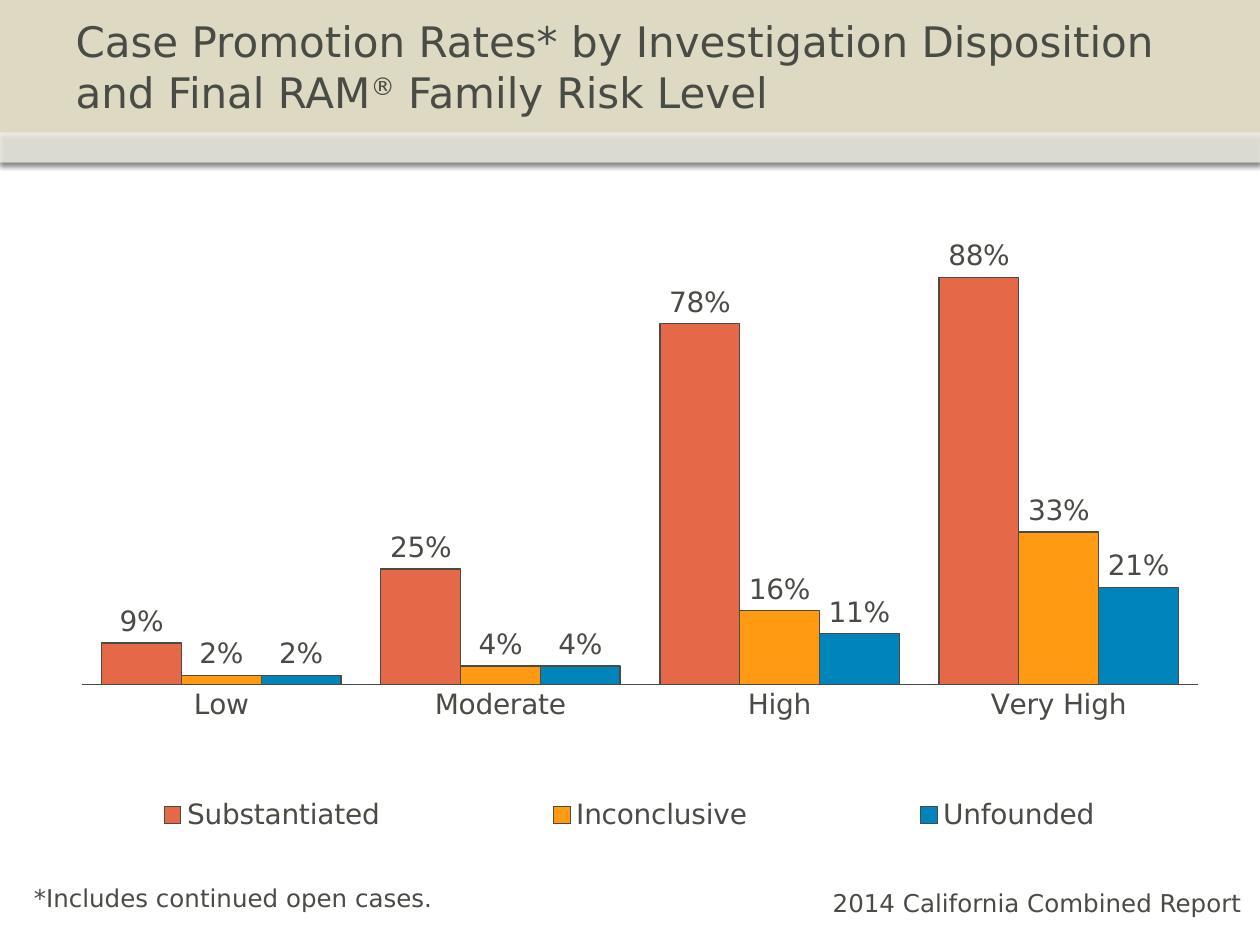
from lxml import etree
from pptx import Presentation
from pptx.chart.data import CategoryChartData
from pptx.dml.color import RGBColor
from pptx.enum import chart as ch, shapes, text
from pptx.oxml import parse_xml
from pptx.oxml.ns import nsdecls, qn
from pptx.util import Pt

FONT = "DejaVu Sans"
INK = RGBColor(0x48, 0x4C, 0x45)
SAND = RGBColor(0xDD, 0xD9, 0xC3)
WHITE = RGBColor(0xFF, 0xFF, 0xFF)
CORAL = RGBColor(0xE5, 0x68, 0x49)
ORANGE = RGBColor(0xFF, 0x9A, 0x12)
BLUE = RGBColor(0x00, 0x85, 0xBA)

LEVELS = ["Low", "Moderate", "High", "Very High"]
RATES = [
    ("Substantiated", CORAL, [0.09, 0.25, 0.78, 0.88]),
    ("Inconclusive", ORANGE, [0.02, 0.04, 0.16, 0.33]),
    ("Unfounded", BLUE, [0.02, 0.04, 0.11, 0.21]),
]
SHADOW = (
    f'<a:effectLst {nsdecls("a")}><a:outerShdw blurRad="{Pt(3.1)}" dist="{Pt(1.8)}" '
    'dir="5400000" rotWithShape="0"><a:srgbClr val="000000"><a:alpha val="35000"/>'
    '</a:srgbClr></a:outerShdw></a:effectLst>'
)


def style(font, size):
    font.name, font.size, font.bold = FONT, Pt(size), False
    font.color.rgb = INK


def add_band(slide, order, box, color, alpha=None):
    sp = slide.shapes.add_shape(shapes.MSO_SHAPE.RECTANGLE, *map(Pt, box))
    sp.fill.solid()
    sp.fill.fore_color.rgb = color
    sp.line.fill.background()
    if alpha is not None:
        clr = sp._element.spPr.find(".//" + qn("a:srgbClr"))
        etree.SubElement(clr, qn("a:alpha")).set("val", str(alpha * 1000))
    sp._element.spPr.append(parse_xml(SHADOW))
    slide.shapes._spTree.insert(2 + order, sp._element)  # behind the title


def add_header(slide, box):
    x, y, w, h = box
    strip = 17.28
    add_band(slide, 0, box, SAND)
    add_band(slide, 1, (x, y + h - strip, w, strip), WHITE, 53)

    # Title
    title = slide.shapes.title
    title.left, title.top = Pt(x + 36), Pt(y)
    title.width, title.height = Pt(w - 72), Pt(h - strip)
    tf = title.text_frame
    tf.word_wrap = True
    tf.auto_size = text.MSO_AUTO_SIZE.NONE
    tf.vertical_anchor = text.MSO_ANCHOR.MIDDLE
    p = tf.paragraphs[0]
    p.alignment = text.PP_ALIGN.LEFT
    style(p.font, 24)
    for part in ("Case Promotion Rates* by Investigation Disposition and Final RAM",
                 "®", " Family Risk Level"):
        r = p.add_run()
        r.text = part
        if part == "®":
            r.font._element.set("baseline", "30000")


def set_layout(parent, x, y, w, h, inner=False):
    target = '<c:layoutTarget val="inner"/>' if inner else ""
    old = parent.find(qn("c:layout"))
    if old is not None:
        parent.remove(old)
    layout = parse_xml(
        f'<c:layout {nsdecls("c")}><c:manualLayout>{target}'
        '<c:xMode val="edge"/><c:yMode val="edge"/>'
        f'<c:x val="{x}"/><c:y val="{y}"/><c:w val="{w}"/><c:h val="{h}"/>'
        '</c:manualLayout></c:layout>')
    parent.insert(0 if inner else 1, layout)


def add_rates_chart(slide, box):
    data = CategoryChartData(number_format="0%")
    data.categories = LEVELS
    for name, _, values in RATES:
        data.add_series(name, values)
    chart = slide.shapes.add_chart(
        ch.XL_CHART_TYPE.COLUMN_CLUSTERED, *map(Pt, box), data).chart
    chart.has_title = False
    style(chart.font, 16)

    # Axes
    value_axis = chart.value_axis
    value_axis.visible = False
    value_axis.has_major_gridlines = False
    value_axis.minimum_scale, value_axis.maximum_scale = 0, 1
    value_axis.major_unit = 0.2
    axis = chart.category_axis
    axis.major_tick_mark = ch.XL_TICK_MARK.NONE
    axis.format.line.color.rgb = INK
    axis.format.line.width = Pt(0.75)

    # Columns and their labels
    plot = chart.plots[0]
    plot.gap_width, plot.overlap = 50, 0
    plot.vary_by_categories = False
    for series, (_, color, _) in zip(plot.series, RATES):
        series.format.fill.solid()
        series.format.fill.fore_color.rgb = color
        series.format.line.color.rgb = INK
        series.format.line.width = Pt(0.75)
        labels = series.data_labels
        labels.show_value = True
        labels.number_format, labels.number_format_is_linked = "0%", False
        labels.position = ch.XL_LABEL_POSITION.OUTSIDE_END
        style(labels.font, 16)

    # Legend across the full width
    chart.has_legend = True
    legend = chart.legend
    legend.position = ch.XL_LEGEND_POSITION.BOTTOM
    legend.include_in_layout = False
    style(legend.font, 16)
    set_layout(legend._element, 0, 0.9, 1, 0.09)
    plot_area = chart._chartSpace.chart.plotArea
    set_layout(plot_area, 0.065, 0.014, 0.887, 0.726, inner=True)


def add_note(slide, box, words, wrap):
    tf = slide.shapes.add_textbox(*map(Pt, box)).text_frame
    tf.word_wrap = wrap
    tf.auto_size = text.MSO_AUTO_SIZE.SHAPE_TO_FIT_TEXT
    p = tf.paragraphs[0]
    p.text = words
    style(p.font, 14)


def main():
    prs = Presentation()
    prs.slide_width, prs.slide_height = Pt(720), Pt(540)
    slide = prs.slides.add_slide(prs.slide_layouts[5])
    add_header(slide, (0, 0, 720, 92.88))
    add_rates_chart(slide, (0, 121.68, 719.28, 364.32))
    add_note(slide, (12.24, 501.12, 459.36, 24.48), "*Includes continued open cases.", True)
    add_note(slide, (468.72, 504, 250.56, 24.48), "2014 California Combined Report", False)
    prs.save("out.pptx")


if __name__ == "__main__":
    main()
